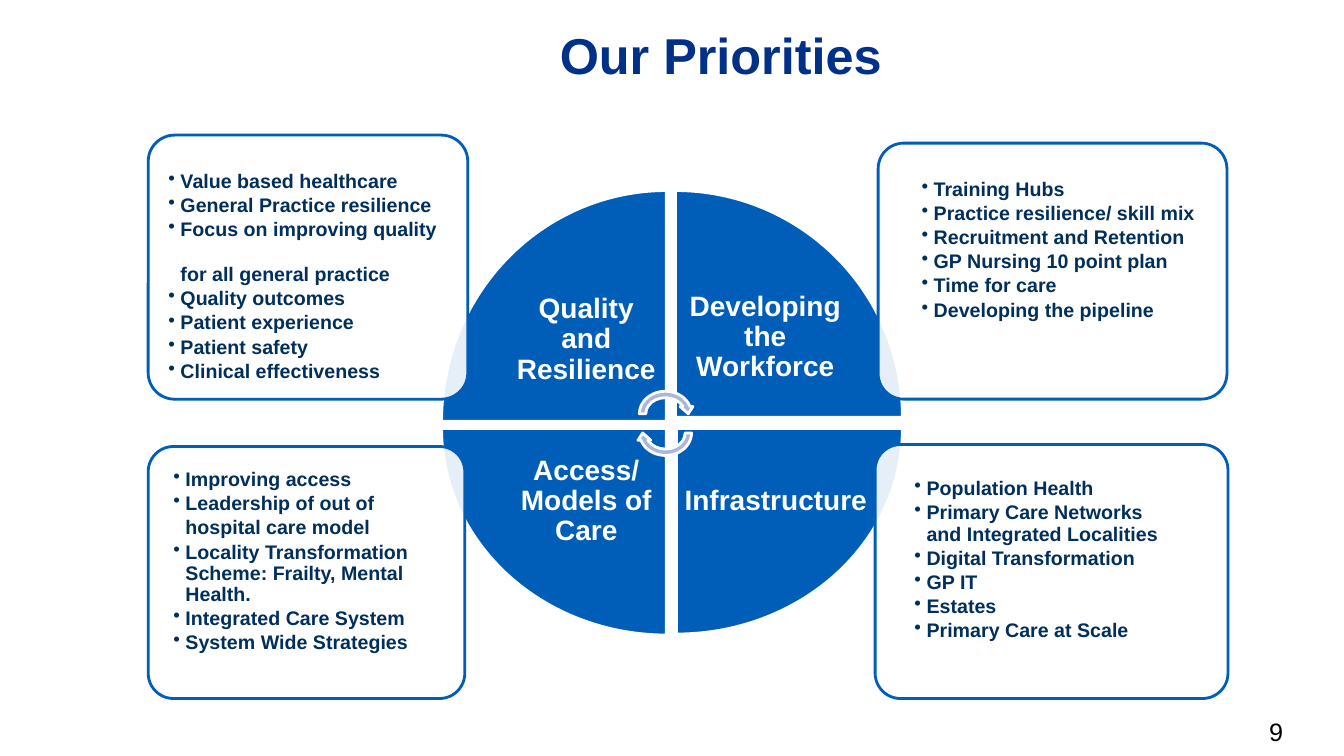
from lxml.etree import SubElement
from pptx import Presentation
from pptx.dml.color import RGBColor
from pptx.enum.shapes import MSO_SHAPE
from pptx.enum.text import MSO_ANCHOR, PP_ALIGN
from pptx.oxml.ns import qn
from pptx.util import Inches, Pt

theme = {
    "font": "Arial",
    "blue": RGBColor.from_string("005EB8"),
    "title": RGBColor.from_string("003087"),
    "navy": RGBColor.from_string("002F5C"),
    "arrow": RGBColor.from_string("ABB6D8"),
    "white": RGBColor.from_string("FFFFFF"),
    "black": RGBColor.from_string("000000"),
    "title_size": 36, "quadrant_size": 20, "number_size": 18, "list_size": 14,
}

presentation = Presentation()
presentation.slide_width = Inches(13.33)
presentation.slide_height = Inches(7.5)
column = presentation.slide_width / 133.3
row = presentation.slide_height / 75
slide = presentation.slides.add_slide(presentation.slide_layouts[6])


def place(area):
    left, top, width, height = area
    return round(left * column), round(top * row), round(width * column), round(height * row)


def add_panel(kind, area, fill, line, rotation=0):
    shape = slide.shapes.add_shape(kind, *place(area))
    shape.shadow.inherit = False
    shape.rotation = rotation
    shape.fill.solid()
    shape.fill.fore_color.rgb = theme[fill]
    shape.line.color.rgb = theme[line]
    shape.line.width = Pt(2)
    return shape


def add_text(area, lines, style, color, bold=True, inset=1, frame_format={}, paragraph_format={}):
    frame = slide.shapes.add_textbox(*place(area)).text_frame
    margins = dict.fromkeys(["margin_left", "margin_right"], round(inset * column))
    margins.update(dict.fromkeys(["margin_top", "margin_bottom"], round(min(inset, 0.5) * row)))
    for name, value in {"word_wrap": True, **margins, **frame_format}.items():
        setattr(frame, name, value)
    for index, line in enumerate(lines):
        paragraph = frame.add_paragraph() if index else frame.paragraphs[0]
        run = paragraph.add_run()
        run.text = line
        for name, value in paragraph_format.items():
            setattr(paragraph, name, value)
        for name, value in {"name": theme["font"], "size": Pt(theme[style]), "bold": bold}.items():
            setattr(run.font, name, value)
        run.font.color.rgb = theme[color]
    return frame


quadrants = [
    ("Quality and Resilience", (43.8, 18.9, 22.3, 22.9), 0, (50.3, 25.6, 15.7, 16.2)),
    ("Developing the Workforce", (67, 18.9, 22.5, 22.5), 90, (67, 25.5, 17.8, 15.9)),
    ("Infrastructure", (67.1, 42.5, 22.4, 20.4), 180, (67.1, 42.5, 19.7, 14.5)),
    ("Access/ Models of Care", (44.7, 41.6, 20.5, 22.3), 270, (50.3, 42.5, 15.7, 14.5)),
]
for label, wedge_area, rotation, label_area in quadrants:
    add_panel(MSO_SHAPE.PIE_WEDGE, wedge_area, "blue", "white", rotation)
    add_text(label_area, [label], "quadrant_size", "white", inset=0.7,
             frame_format={"vertical_anchor": MSO_ANCHOR.MIDDLE},
             paragraph_format={"alignment": PP_ALIGN.CENTER, "line_spacing": 0.9})

for top, rotation in [(38.5, 0), (40.4, 180)]:
    add_panel(MSO_SHAPE.CIRCULAR_ARROW, (63.1, top, 5.8, 5.1), "arrow", "white", rotation)

priorities = [
    ((14.7, 13.4, 31.7, 26.2), (16.3, 16.6, 29.8, 22.3), [
        "Value based healthcare", "General Practice resilience", "Focus on improving quality",
        "for all general practice", "Quality outcomes", "Patient experience",
        "Patient safety", "Clinical effectiveness"]),
    ((14.7, 44.3, 31.4, 25), (16.8, 46.2, 27.3, 20), [
        "Improving access", "Leadership of out of", "hospital care model",
        "Locality Transformation Scheme: Frailty, Mental Health.",
        "Integrated Care System", "System Wide Strategies"]),
    ((86.8, 44.1, 35, 25.2), (90.3, 47.1, 26, 20), [
        "Population Health", "Primary Care Networks and Integrated Localities",
        "Digital Transformation", "GP IT", "Estates", "Primary Care at Scale"]),
    ((87.1, 14.2, 34.6, 25.4), (91, 17.4, 30.5, 20), [
        "Training Hubs", "Practice resilience/ skill mix", "Recruitment and Retention",
        "GP Nursing 10 point plan", "Time for care", "Developing the pipeline"]),
]
continuation_gaps = {"for all general practice": 15, "hospital care model": 0}
hanging = round(1.2 * column)
for panel_area, list_area, lines in priorities:
    panel = add_panel(MSO_SHAPE.ROUNDED_RECTANGLE, panel_area, "white", "blue")
    panel.adjustments[0] = 0.1
    color = panel.fill._xPr.find(qn("a:solidFill"))[0]
    SubElement(color, qn("a:alpha"), val="90000")
    frame = add_text(list_area, lines, "list_size", "navy", inset=0.4,
                     paragraph_format={"line_spacing": 0.9, "space_after": Pt(2.1)})
    for paragraph in frame.paragraphs:
        properties = paragraph._p.get_or_add_pPr()
        properties.set("marL", str(hanging))
        if paragraph.text in continuation_gaps:
            paragraph.space_before = Pt(continuation_gaps[paragraph.text])
        else:
            properties.set("indent", str(-hanging))
            SubElement(properties, qn("a:buChar"), char="•")

add_text((14.7, 1.9, 113.6, 6.1), ["Our Priorities"], "title_size", "title",
         paragraph_format={"alignment": PP_ALIGN.CENTER})
add_text((124.9, 70.6, 3.4, 4), ["9"], "number_size", "black", bold=False,
         frame_format={"word_wrap": False})

presentation.save("out.pptx")
